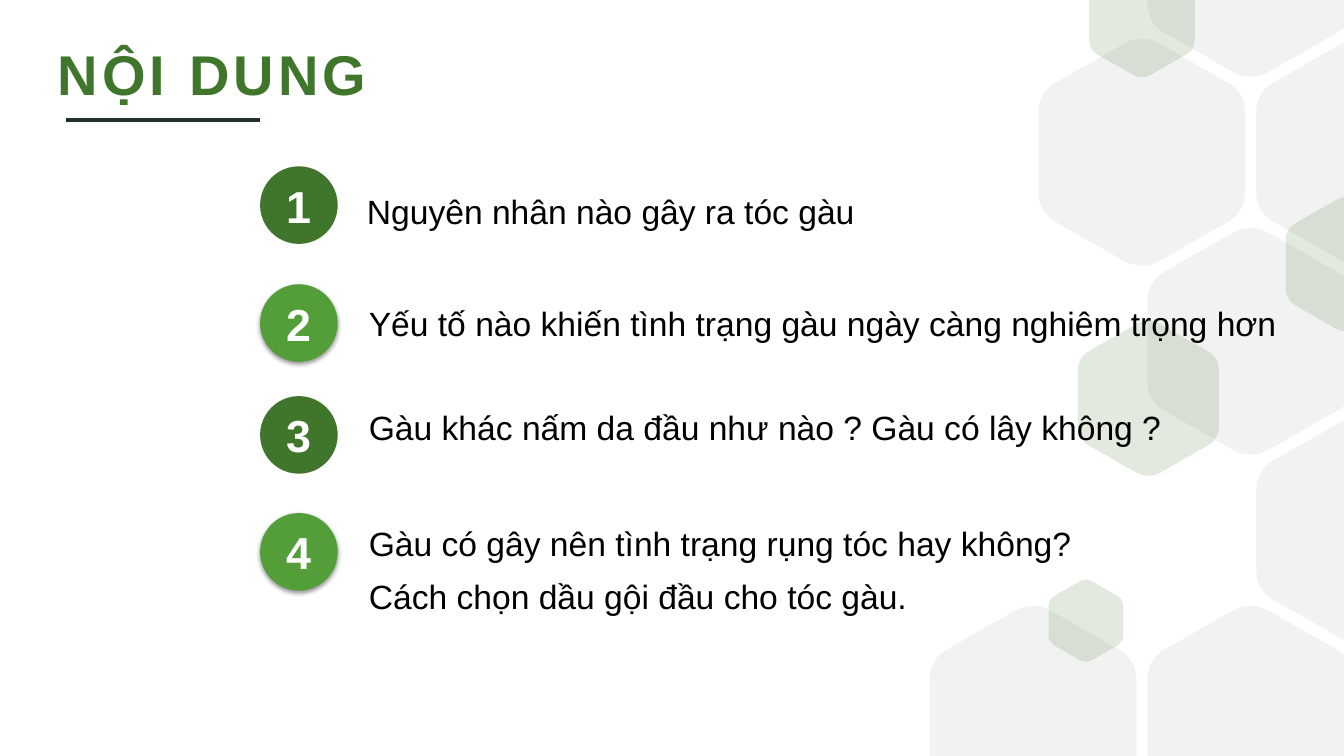
"""Build the contents slide: a title, four numbered topics and a hexagon backdrop."""
from lxml import etree
from pptx import Presentation
from pptx.dml.color import RGBColor
from pptx.enum.shapes import MSO_CONNECTOR, MSO_SHAPE
from pptx.enum.text import MSO_ANCHOR, MSO_AUTO_SIZE
from pptx.oxml.ns import qn
from pptx.util import Inches, Pt

LINE, OVAL = MSO_CONNECTOR.STRAIGHT, MSO_SHAPE.OVAL
TOP = MSO_ANCHOR.TOP
FIT = MSO_AUTO_SIZE.SHAPE_TO_FIT_TEXT

COLORS = {"dark": "3F762B", "light": "549E39", "rule": "223028",
          "gray": "F2F2F2", "white": "FFFFFF", "black": "000000"}
FONT = "Arial"
WIDE, HIGH = 13.33, 7.5

TITLE = "NỘI DUNG"
TOPICS = [
    (1.65, (3.54, 1.84, 8.79, 0.5), ["Nguyên nhân nào gây ra tóc gàu"]),
    (2.82, (3.56, 2.96, 9.33, 0.5),
     ["Yếu tố nào khiến tình trạng gàu ngày càng nghiêm trọng hơn"]),
    (3.93, (3.56, 3.99, 8.79, 0.5),
     ["Gàu khác nấm da đầu như nào ? Gàu có lây không ?"]),
    (5.09, (3.56, 5.02, 8.79, 1.15),
     ["Gàu có gây nên tình trạng rụng tóc hay không?",
      "Cách chọn dầu gội đầu cho tóc gàu."]),
]
DISC_X, DISC = 2.58, 0.77
NUM_X, NUM_W, NUM_H, NUM_DROP = 2.74, 0.55, 0.64, 0.07

GRID_X, GRID_Y, STEP_X, STEP_Y = 9.22, 0.38, 1.08, 1.875
CELL, RATIO = 2.05, 1.103
CELLS = [(0, 3), (2, 3), (3, 0), (2, -1), (2, 1), (1, 0), (3, 2)]
TINTS = [(12.75, 1.95, 1.22), (10.4, 5.75, 0.74),
         (10.8, -0.39, 1.05), (10.69, 3.18, 1.4)]
UPPER = [
    (1, 0.323), (1, 0.27), (0.97, 0.221), (0.917, 0.195),
    (0.583, 0.022), (0.53, -0.004), (0.47, -0.004), (0.417, 0.022),
    (0.083, 0.195), (0.03, 0.221), (0, 0.27), (0, 0.323),
]
LOWER = [(1 - x, 1 - y) for x, y in UPPER]


def color(name):
    return RGBColor.from_string(COLORS[name])


def outline(top, tall):
    """List a hexagon's points, cut off at the slide's top or bottom."""
    if top < 0:
        cut = -top / tall
        return LOWER + [(1, cut), (0, cut)]
    if top + tall > HIGH:
        cut = (HIGH - top) / tall
        return UPPER + [(0, cut), (1, cut)]
    return UPPER + LOWER


def bend(shape, count):
    """Turn the three lines of each corner into one curve."""
    road = shape._element.spPr.find(".//" + qn("a:path"))
    lines = road.findall(qn("a:lnTo"))
    for start in range(0, count * 4, 4):
        first, *rest = lines[start:start + 3]
        first.tag = qn("a:cubicBezTo")
        for line in rest:
            first.append(line[0])
            road.remove(line)


def add_hex(slide, left, top, width, name, alpha=None):
    tall = width * RATIO
    dots = outline(top, tall)
    spots = [(Inches(left + x * width), Inches(top + y * tall)) for x, y in dots]
    pen = slide.shapes.build_freeform(*spots[0])
    pen.add_line_segments(spots[1:], close=True)
    shape = pen.convert_to_shape()
    bend(shape, len(dots) // 4)
    shape.shadow.inherit = False
    paint(shape, name)
    if alpha:
        tone = shape._element.spPr.find(".//" + qn("a:srgbClr"))
        etree.SubElement(tone, qn("a:alpha"), val=str(alpha * 1000))


def paint(shape, name):
    shape.fill.solid()
    shape.fill.fore_color.rgb = color(name)
    shape.line.fill.background()


def write(shape, lines, size, name, bold=False, space=1):
    """Fill a shape's text frame and format its runs."""
    frame = shape.text_frame
    frame.text = "\n".join(lines)
    frame.word_wrap = True
    frame.auto_size = FIT
    frame.vertical_anchor = TOP
    for para in frame.paragraphs:
        para.line_spacing = space
        for run in para.runs:
            font = run.font
            font.name, font.size, font.bold = FONT, Pt(size), bold
            font.color.rgb = color(name)


def add_shade(shape):
    """Give a disc a soft shadow below it."""
    box = shape._element.spPr.find(qn("a:effectLst"))
    shade = etree.SubElement(box, qn("a:outerShdw"), blurRad=str(Pt(3.1)),
                             dist=str(Pt(1.6)), dir="5400000", rotWithShape="0")
    tone = etree.SubElement(shade, qn("a:srgbClr"), val=COLORS["black"])
    etree.SubElement(tone, qn("a:alpha"), val="38000")


def add_disc(slide, num, top):
    disc = slide.shapes.add_shape(
        OVAL, *map(Inches, (DISC_X, top, DISC, DISC)))
    disc.shadow.inherit = False
    paint(disc, "dark" if num % 2 else "light")
    if num % 2 == 0:
        add_shade(disc)
    box = slide.shapes.add_textbox(
        *map(Inches, (NUM_X, top + NUM_DROP, NUM_W, NUM_H)))
    write(box, [str(num)], 32, "white", True)


def add_title(slide):
    title = slide.shapes.title
    title.left, title.top, title.width, title.height = map(
        Inches, (0.47, 0.34, 8.63, 0.77))
    write(title, [TITLE], 40, "dark", True)
    para = title.text_frame.paragraphs[0]
    para._p.get_or_add_pPr().set("algn", "l")
    para.runs[0]._r.get_or_add_rPr().set("spc", "300")
    rule = slide.shapes.add_connector(
        LINE, *map(Inches, (0.65, 1.19, 2.58, 1.19)))
    rule.line.color.rgb = color("rule")
    rule.line.width = Pt(3)
    etree.SubElement(rule._element.spPr, qn("a:effectLst"))


def main():
    deck = Presentation()
    deck.slide_width, deck.slide_height = Inches(WIDE), Inches(HIGH)
    slide = deck.slides.add_slide(deck.slide_layouts[5])
    for col, row in CELLS:
        add_hex(slide, GRID_X + col * STEP_X, GRID_Y + row * STEP_Y, CELL, "gray")
    for left, top, width in TINTS:
        add_hex(slide, left, top, width, "dark", 15)
    add_title(slide)
    for num, (top, place, lines) in enumerate(TOPICS, 1):
        add_disc(slide, num, top)
        label = slide.shapes.add_textbox(*map(Inches, place))
        write(label, lines, 24, "black", space=1.3 if len(lines) > 1 else 1)
    deck.save("out.pptx")


if __name__ == "__main__":
    main()
